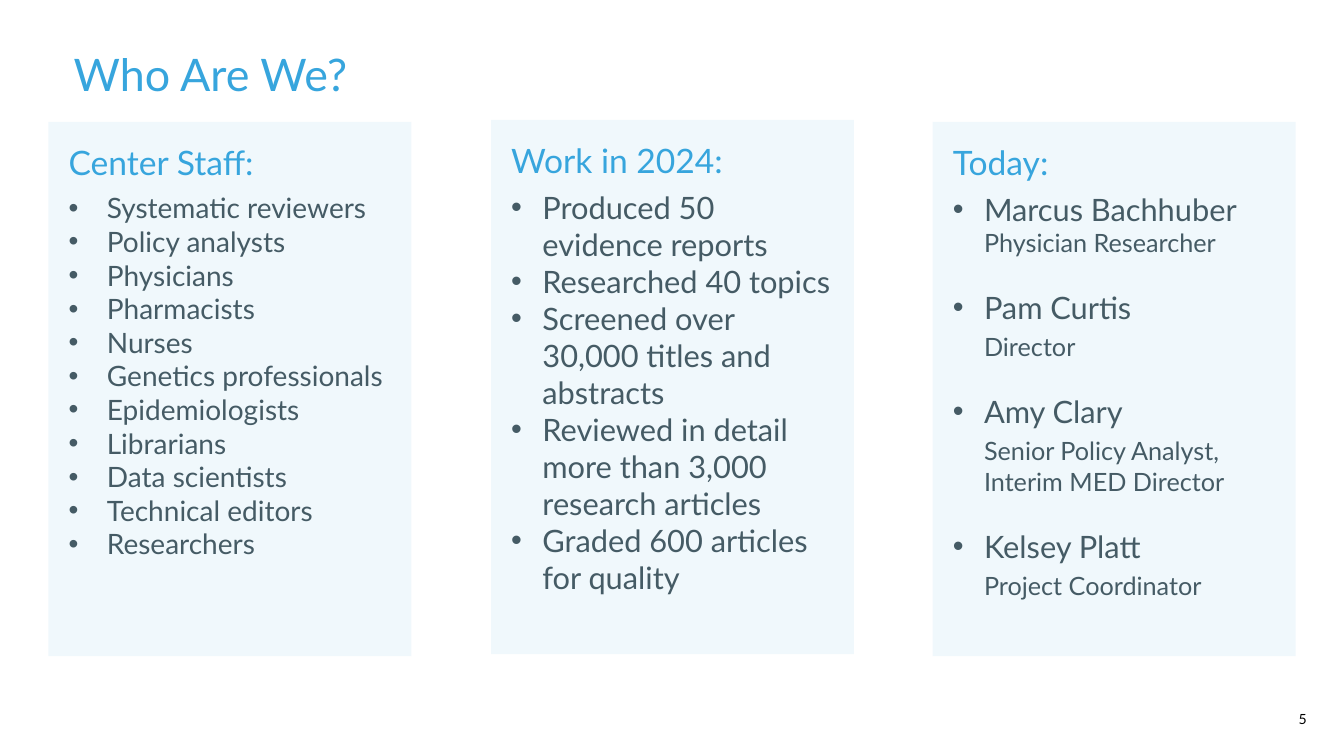
from dataclasses import dataclass

from lxml.etree import SubElement
from pptx import Presentation
from pptx.dml.color import RGBColor as Color
from pptx.enum.text import MSO_ANCHOR as Anchor, MSO_AUTO_SIZE as Fit, PP_ALIGN as Align
from pptx.oxml.ns import qn
from pptx.util import Emu, Pt

BLUE = Color(0x37, 0xA5, 0xDD)
SLATE = Color(0x45, 0x5B, 0x65)
BLACK = Color(0, 0, 0)
FONT = "Lato"
SCALE = 9144
COLUMNS = 4


@dataclass
class Line:
    text: str
    size: int = 22
    indent: int = 31
    bullet: bool = True
    before: int = 0
    after: int = 0
    color: Color = SLATE


@dataclass
class Panel:
    slot: int
    left: int
    top: int
    head: str
    lines: list[Line]


def px(value: int) -> Emu:
    return Emu(value * SCALE)


def place(shape, left: int, top: int, width: int, height: int) -> None:
    shape.left, shape.top = px(left), px(top)
    shape.width, shape.height = px(width), px(height)


def write(para, text: str, *, size: int, color: Color, align=Align.LEFT,
          before: int = 0, after: int = 0, indent: int = 0, bullet: bool = False) -> None:
    para.alignment = align
    para.line_spacing = 1.0
    para.space_before, para.space_after = Pt(before), Pt(after)
    run = para.add_run()
    run.text = text
    font = run.font
    font.name, font.size, font.bold = FONT, Pt(size), False
    font.color.rgb = color
    props = para._p.get_or_add_pPr()
    props.set("marL", str(px(indent)))
    props.set("indent", str(px(-indent if bullet else 0)))
    if bullet:
        SubElement(props, qn("a:buChar")).set("char", "•")
    else:
        SubElement(props, qn("a:buNone"))


def draw(slide, panel: Panel) -> None:
    box = slide.placeholders[panel.slot]
    place(box, panel.left, panel.top, 360, 530)
    box.fill.solid()
    box.fill.fore_color.rgb = BLUE
    tint = box.element.spPr.find(".//" + qn("a:srgbClr"))
    SubElement(tint, qn("a:alpha")).set("val", "7000")
    frame = box.text_frame
    frame.word_wrap, frame.auto_size = True, Fit.NONE
    frame.vertical_anchor = Anchor.TOP
    frame.margin_left = frame.margin_right = px(20)
    frame.margin_top = frame.margin_bottom = px(20)
    write(frame.paragraphs[0], panel.head, size=24, color=BLUE, after=6)
    for line in panel.lines:
        write(frame.add_paragraph(), line.text, size=line.size, color=line.color,
              before=line.before, after=line.after, indent=line.indent,
              bullet=line.bullet)


def role(text: str, before: int = 4, after: int = 22) -> Line:
    return Line(text, size=18, bullet=False, before=before, after=after)


STAFF = [
    "Systematic reviewers", "Policy analysts", "Physicians", "Pharmacists",
    "Nurses", "Genetics professionals", "Epidemiologists", "Librarians",
    "Data scientists", "Technical editors", "Researchers",
]
WORK = [
    "Produced 50 evidence reports",
    "Researched 40 topics",
    "Screened over 30,000 titles and abstracts",
    "Reviewed in detail more than 3,000 research articles",
    "Graded 600 articles for quality",
]
TODAY = [
    Line("Marcus Bachhuber"), role("Physician Researcher", before=0),
    Line("Pam Curtis"), role("Director"),
    Line("Amy Clary"), role("Senior Policy Analyst,", after=0),
    role("Interim MED Director", before=1),
    Line("Kelsey Platt"), role("Project Coordinator", after=0),
]
PANELS = [
    Panel(1, 48, 121, "Center Staff:", [Line(t, size=20, indent=38) for t in STAFF]),
    Panel(2, 487, 119, "Work in 2024:", [Line(t) for t in WORK]),
    Panel(3, 925, 121, "Today:", TODAY),
]


def main() -> None:
    deck = Presentation()
    deck.slide_width, deck.slide_height = px(1333), px(750)
    slide = deck.slides.add_slide(deck.slide_layouts[COLUMNS])

    title = slide.shapes.title
    place(title, 63, 33, 1164, 80)
    title.text_frame.vertical_anchor = Anchor.MIDDLE
    write(title.text_frame.paragraphs[0], "Who Are We?", size=32, color=BLUE)

    for panel in PANELS:
        draw(slide, panel)
    spare = slide.placeholders[4].element
    spare.getparent().remove(spare)

    number = slide.shapes.add_textbox(px(1267), px(700), px(50), px(27))
    number.text_frame.word_wrap = True
    number.text_frame.vertical_anchor = Anchor.MIDDLE
    write(number.text_frame.paragraphs[0], "5", size=10, color=BLACK, align=Align.CENTER)

    deck.save("out.pptx")


if __name__ == "__main__":
    main()
